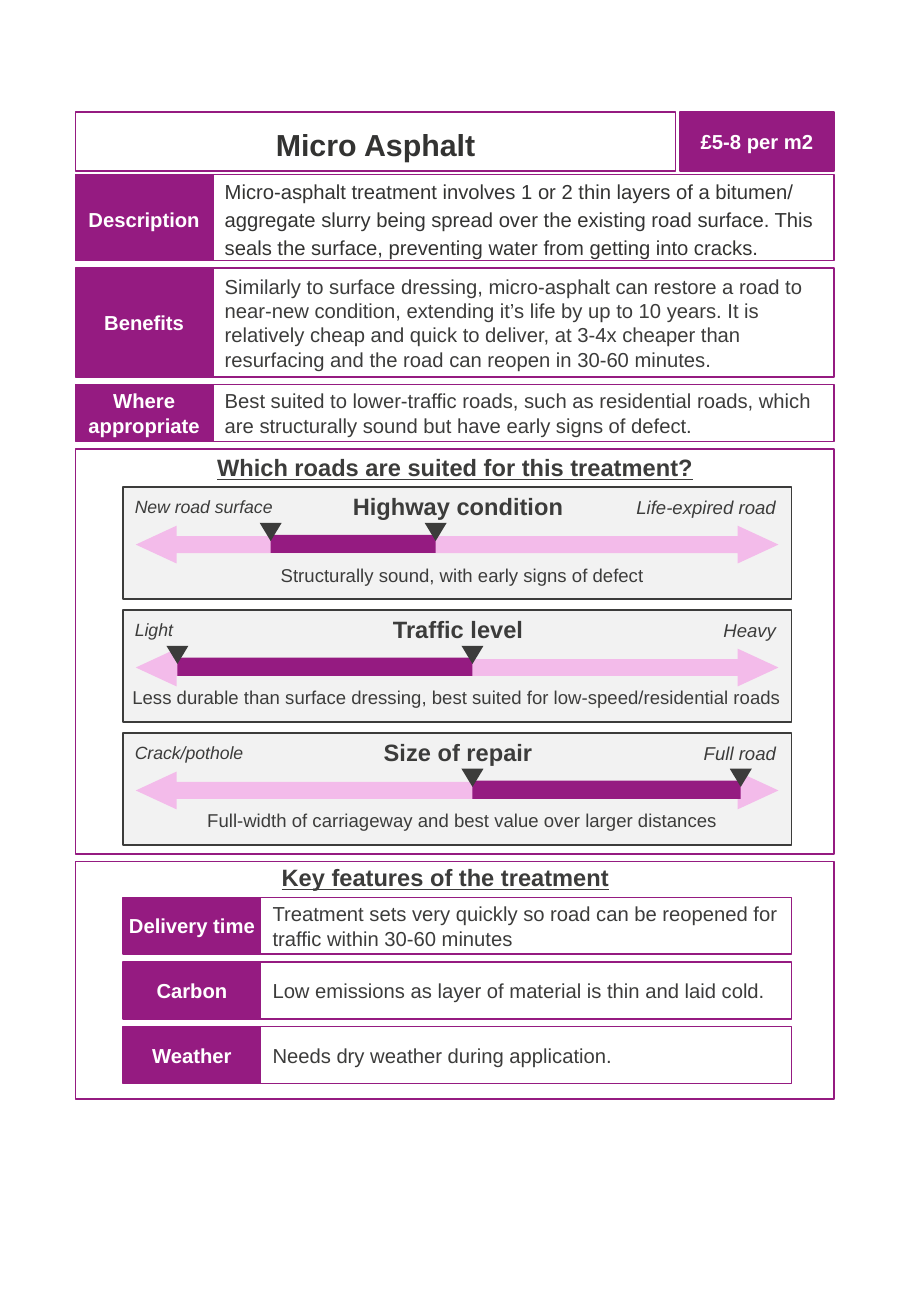
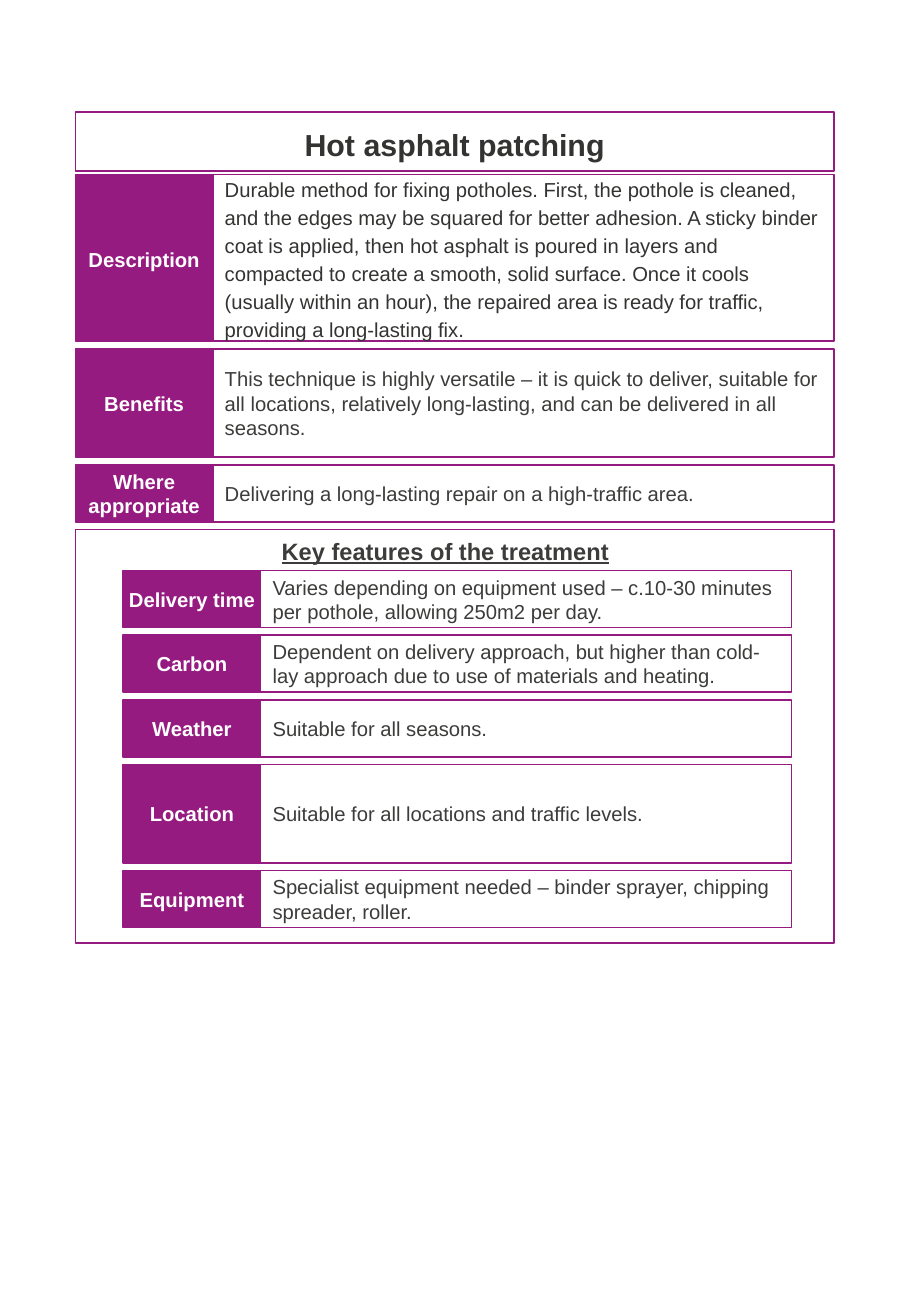
"""Build two road treatment fact sheets."""
from pptx import Presentation
from pptx.dml.color import RGBColor
from pptx.enum.shapes import MSO_SHAPE as Kind
from pptx.enum.text import MSO_ANCHOR as Anchor, PP_ALIGN as Align
from pptx.util import Cm, Pt

PLUM, PINK, GREY = "951B81", "F3BBEA", "F2F2F2"
DARK, INK, WHITE = "3C3C3B", "333332", "FFFFFF"
LEFT, WIDE, TAG = 1.58, 15.86, 2.87
INNER, SPAN = 2.58, 13.97
GAP, LOW = 0.16, 1.19

STYLES = {
    "title": dict(size=Pt(18), bold=True, color=INK, align=Align.CENTER, side=0.1, loose=True),
    "tag": dict(size=Pt(12), bold=True, color=WHITE, align=Align.CENTER, side=0.1),
    "loose tag": dict(size=Pt(12), bold=True, color=WHITE, align=Align.CENTER, side=0.1, loose=True),
    "body": dict(size=Pt(12), color=DARK, side=0.25),
    "loose body": dict(size=Pt(12), color=INK, side=0.25, loose=True),
    "head": dict(size=Pt(14), bold=True, underline=True, color=DARK, align=Align.CENTER),
    "scale": dict(size=Pt(14), bold=True, color=DARK, align=Align.CENTER),
    "start": dict(size=Pt(10.5), italic=True, color=DARK),
    "end": dict(size=Pt(11), italic=True, color=DARK, align=Align.RIGHT),
    "note": dict(size=Pt(11), color=DARK, align=Align.CENTER),
}

SHEETS = [
    dict(
        title="Micro Asphalt",
        price="£5-8 per m2",
        rows=[
            ("Description", 1.8, "Micro-asphalt treatment involves 1 or 2 thin layers of a bitumen/ aggregate slurry being spread over the existing road surface. This seals the surface, preventing water from getting into cracks."),
            ("Benefits", 2.27, "Similarly to surface dressing, micro-asphalt can restore a road to near-new condition, extending it’s life by up to 10 years. It is relatively cheap and quick to deliver, at 3-4x cheaper than resurfacing and the road can reopen in 30-60 minutes."),
            ("Where appropriate", LOW, "Best suited to lower-traffic roads, such as residential roads, which are structurally sound but have early signs of defect."),
        ],
        scales=[
            ("Highway condition", "New road surface", "Life-expired road", 5.66, 9.11,
             "Structurally sound, with early signs of defect", 2.95, 13.44),
            ("Traffic level", "Light", "Heavy", 3.71, 9.88,
             "Less durable than surface dressing, best suited for low-speed/residential roads", 2.57, SPAN),
            ("Size of repair", "Crack/pothole", "Full road", 9.88, 15.49,
             "Full-width of carriageway and best value over larger distances", 2.95, 13.44),
        ],
        lead=0.75,
        drop=0.03,
        keys=[
            ("Delivery time", LOW, "Treatment sets very quickly so road can be reopened for traffic within 30-60 minutes"),
            ("Carbon", LOW, "Low emissions as layer of material is thin and laid cold."),
            ("Weather", LOW, "Needs dry weather during application."),
        ],
    ),
    dict(
        title="Hot asphalt patching",
        price=None,
        rows=[
            ("Description", 3.48, "Durable method for fixing potholes. First, the pothole is cleaned, and the edges may be squared for better adhesion. A sticky binder coat is applied, then hot asphalt is poured in layers and compacted to create a smooth, solid surface. Once it cools (usually within an hour), the repaired area is ready for traffic, providing a long-lasting fix."),
            ("Benefits", 2.27, "This technique is highly versatile – it is quick to deliver, suitable for all locations, relatively long-lasting, and can be delivered in all seasons."),
            ("Where appropriate", LOW, "Delivering a long-lasting repair on a high-traffic area."),
        ],
        scales=[],
        lead=0.86,
        drop=0.15,
        keys=[
            ("Delivery time", LOW, "Varies depending on equipment used – c.10-30 minutes per pothole, allowing 250m2 per day."),
            ("Carbon", LOW, "Dependent on delivery approach, but higher than cold-lay approach due to use of materials and heating."),
            ("Weather", LOW, "Suitable for all seasons."),
            ("Location", 2.06, "Suitable for all locations and traffic levels."),
            ("Equipment", LOW, "Specialist equipment needed – binder sprayer, chipping spreader, roller."),
        ],
    ),
]


def draw(page, kind, x, y, w, h, fill=None, line=None):
    """Add a preset shape with a plain fill and line."""
    shape = page.shapes.add_shape(kind, Cm(x), Cm(y), Cm(w), Cm(h))
    shape.shadow.inherit = False
    for part, tint in ((shape.fill, fill), (shape.line.fill, line)):
        if tint:
            part.solid()
            part.fore_color.rgb = RGBColor.from_string(tint)
        else:
            part.background()
    if line:
        shape.line.width = Pt(1)
    return shape


def write(shape, text, name, anchor=Anchor.MIDDLE):
    """Set the text of a shape in a named style."""
    style = STYLES[name]
    frame = shape.text_frame
    side = Cm(style.get("side", 0))
    frame.margin_left = frame.margin_right = side
    frame.margin_top = frame.margin_bottom = 0
    frame.word_wrap = True
    frame.vertical_anchor = anchor
    para = frame.paragraphs[0]
    para.alignment = style.get("align", Align.LEFT)
    if style.get("loose"):
        para.line_spacing, para.space_after = 1.15, Pt(8)
    run = para.add_run()
    run.text = text
    run.font.name = "Arial"
    run.font.color.rgb = RGBColor.from_string(style["color"])
    for key in ("size", "bold", "italic", "underline"):
        if key in style:
            setattr(run.font, key, style[key])


deck = Presentation()
deck.slide_width, deck.slide_height = Cm(19.05), Cm(27.51)

for sheet in SHEETS:
    page = deck.slides.add_slide(deck.slide_layouts[6])
    rows, labels = [], []

    wide = 12.55 if sheet["price"] else WIDE
    write(draw(page, Kind.RECTANGLE, LEFT, 2.34, wide, 1.24, line=PLUM), sheet["title"], "title")
    if sheet["price"]:
        price = draw(page, Kind.RECTANGLE, 14.22, 2.34, 3.22, 1.24, PLUM, PLUM)
        write(price, sheet["price"], "tag")

    top = 3.65
    for tag, high, body in sheet["rows"]:
        rows.append((LEFT, top, WIDE, high, tag, body))
        top += high + GAP

    if sheet["scales"]:
        draw(page, Kind.RECTANGLE, LEFT, top, WIDE, 8.46, line=PLUM)
        labels.append((4.06, top + 0.08, 10.92, 0.61, "Which roads are suited for this treatment?", "head"))
        for i, (name, start, end, low, high, note, x, w) in enumerate(sheet["scales"]):
            y = top + 0.79 + i * 2.57
            draw(page, Kind.RECTANGLE, INNER, y, SPAN, 2.34, GREY, DARK)
            arrow = draw(page, Kind.LEFT_RIGHT_ARROW, 2.84, y + 0.81, 13.44, 0.79, PINK)
            arrow.adjustments[0], arrow.adjustments[1] = 0.45, 1.08
            draw(page, Kind.RECTANGLE, low, y + 1, high - low, 0.38, PLUM)
            for mark in (low, high):
                draw(page, Kind.ISOSCELES_TRIANGLE, mark - 0.23, y + 0.75, 0.46, 0.38, DARK).rotation = 180
            labels += [
                (2.82, y + 0.18, 4.27, 0.46, start, "start"),
                (12.24, y + 0.19, 3.99, 0.48, end, "end"),
                (6.09, y + 0.1, 6.98, 0.61, name, "scale"),
                (x, y + 1.6, w, 0.48, note, "note"),
            ]
        top += 8.46 + GAP

    labels.append((2.57, top + sheet["drop"], 13.49, 0.61, "Key features of the treatment", "head"))
    y = top + sheet["lead"]
    for tag, high, body in sheet["keys"]:
        rows.append((INNER, y, SPAN, high, tag, body))
        y += high + GAP
    draw(page, Kind.RECTANGLE, LEFT, top, WIDE, y + GAP - top, line=PLUM)

    for x, y, w, h, tag, body in rows:
        loose = "loose " if tag == "Description" else ""
        write(draw(page, Kind.RECTANGLE, x + TAG, y, w - TAG, h, line=PLUM), body, loose + "body")
        write(draw(page, Kind.RECTANGLE, x, y, TAG, h, PLUM, PLUM), tag, loose + "tag")

    for x, y, w, h, text, name in labels:
        write(page.shapes.add_textbox(Cm(x), Cm(y), Cm(w), Cm(h)), text, name, Anchor.TOP)

deck.save("out.pptx")
